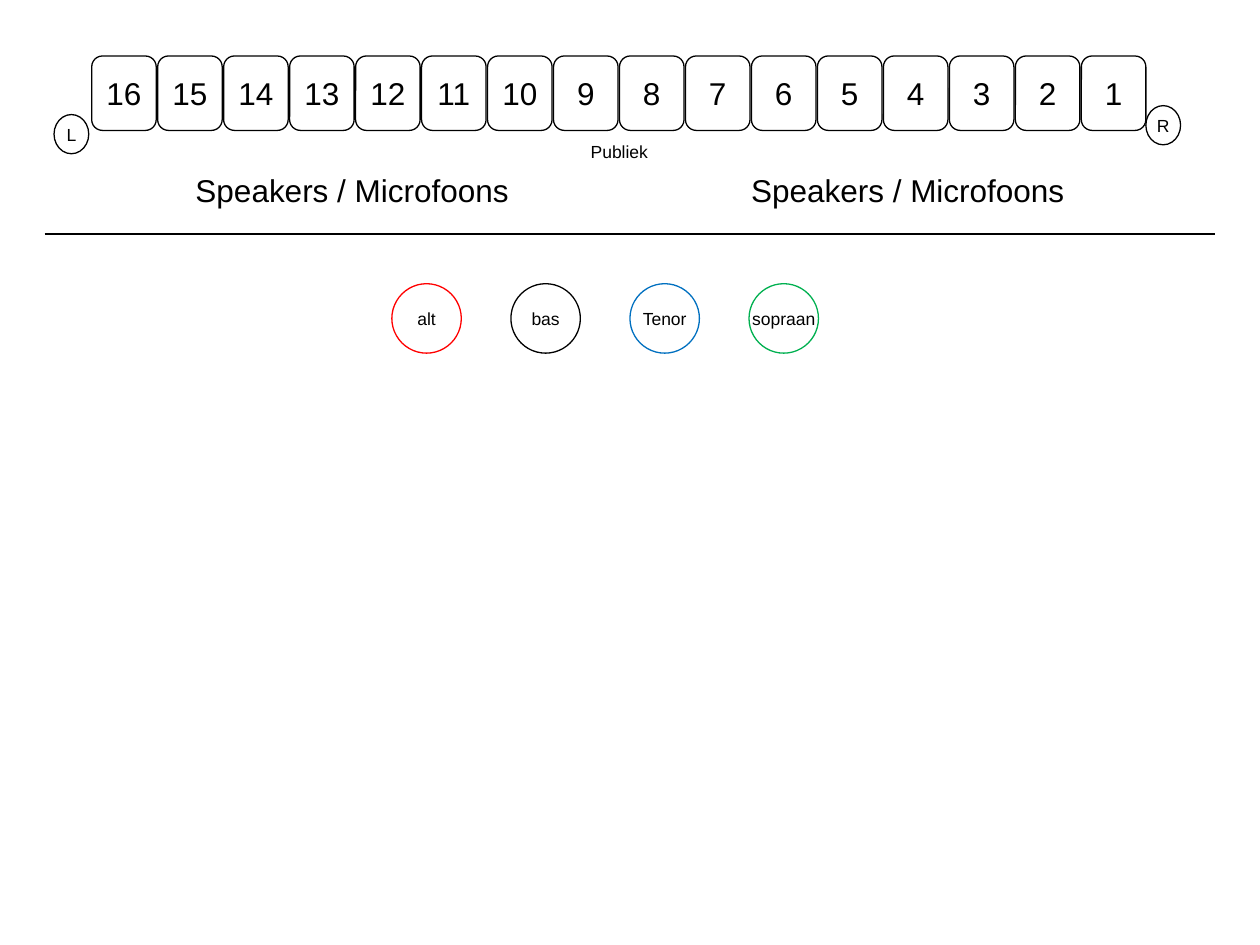
from pptx import Presentation
from pptx.dml.color import RGBColor
from pptx.enum.shapes import MSO_CONNECTOR, MSO_SHAPE
from pptx.enum.text import MSO_ANCHOR, PP_ALIGN
from pptx.oxml.ns import qn
from pptx.util import Cm, Pt
from lxml.etree import SubElement

BLACK, WHITE = "000000", "FFFFFF"
LINE_WIDTH = Pt(0.75)

# Places and sizes are in cm: left, top, width, height
SEATS = [str(number) for number in range(16, 0, -1)]
SEAT_LEFT, SEAT_TOP, SEAT_PITCH = 1.85, 1.13, 1.33
SEAT_WIDTH, SEAT_HEIGHT = 1.3, 1.5

VOICES = [("alt", "FF0000"), ("bas", BLACK), ("Tenor", "0070C0"), ("sopraan", "00B050")]
VOICE_LEFT, VOICE_TOP, VOICE_PITCH, VOICE_SIZE = 7.9, 5.72, 2.4, 1.4

SPEAKERS = [("L", (1.09, 2.31, 0.7, 0.79)), ("R", (23.1, 2.13, 0.7, 0.79))]

LABELS = [
    ("Publiek", 10, (10.49, 2.72, 3.99, 0.69)),
    ("Speakers / Microfoons", 18, (3.1, 3.33, 8, 1.02)),
    ("Speakers / Microfoons", 18, (14.3, 3.33, 8, 1.02)),
]
DIVIDER = (0.9, 4.72, 24.5, 4.72)


def color(hex_string):
    return RGBColor.from_string(hex_string)


def write(shape, text, size):
    """Put centred black Arial text in a shape or text box."""
    text_frame = shape.text_frame
    text_frame.text = text
    paragraph = text_frame.paragraphs[0]
    paragraph.alignment = PP_ALIGN.CENTER
    font = paragraph.runs[0].font
    font.name, font.size = "Arial", Pt(size)
    font.color.rgb = color(BLACK)


def add_outlined(slide, kind, box, text, size, line=BLACK, fill=None):
    shape = slide.shapes.add_shape(kind, *map(Cm, box))
    shape.shadow.inherit = False
    if fill:
        shape.fill.solid()
        shape.fill.fore_color.rgb = color(fill)
    else:
        shape.fill.background()
    shape.line.color.rgb = color(line)
    shape.line.width = LINE_WIDTH
    write(shape, text, size)
    shape.text_frame.word_wrap = False
    shape.text_frame.vertical_anchor = MSO_ANCHOR.MIDDLE


def add_divider(slide):
    divider = slide.shapes.add_connector(MSO_CONNECTOR.STRAIGHT, *map(Cm, DIVIDER))
    divider.line.color.rgb = color(BLACK)
    divider.line.width = LINE_WIDTH
    SubElement(divider._element.spPr, qn("a:effectLst"))


def main():
    presentation = Presentation()
    presentation.slide_width, presentation.slide_height = Cm(25.4), Cm(19.05)
    slide = presentation.slides.add_slide(presentation.slide_layouts[6])

    for index, (voice, line) in enumerate(VOICES):
        box = (VOICE_LEFT + index * VOICE_PITCH, VOICE_TOP, VOICE_SIZE, VOICE_SIZE)
        add_outlined(slide, MSO_SHAPE.OVAL, box, voice, 10, line, WHITE)

    add_divider(slide)

    for index, seat in enumerate(SEATS):
        box = (SEAT_LEFT + index * SEAT_PITCH, SEAT_TOP, SEAT_WIDTH, SEAT_HEIGHT)
        add_outlined(slide, MSO_SHAPE.ROUNDED_RECTANGLE, box, seat, 18)

    for side, box in SPEAKERS:
        add_outlined(slide, MSO_SHAPE.OVAL, box, side, 10, fill=WHITE)

    for text, size, box in LABELS:
        label = slide.shapes.add_textbox(*map(Cm, box))
        label.text_frame.word_wrap = True
        write(label, text, size)

    presentation.save("out.pptx")


if __name__ == "__main__":
    main()
